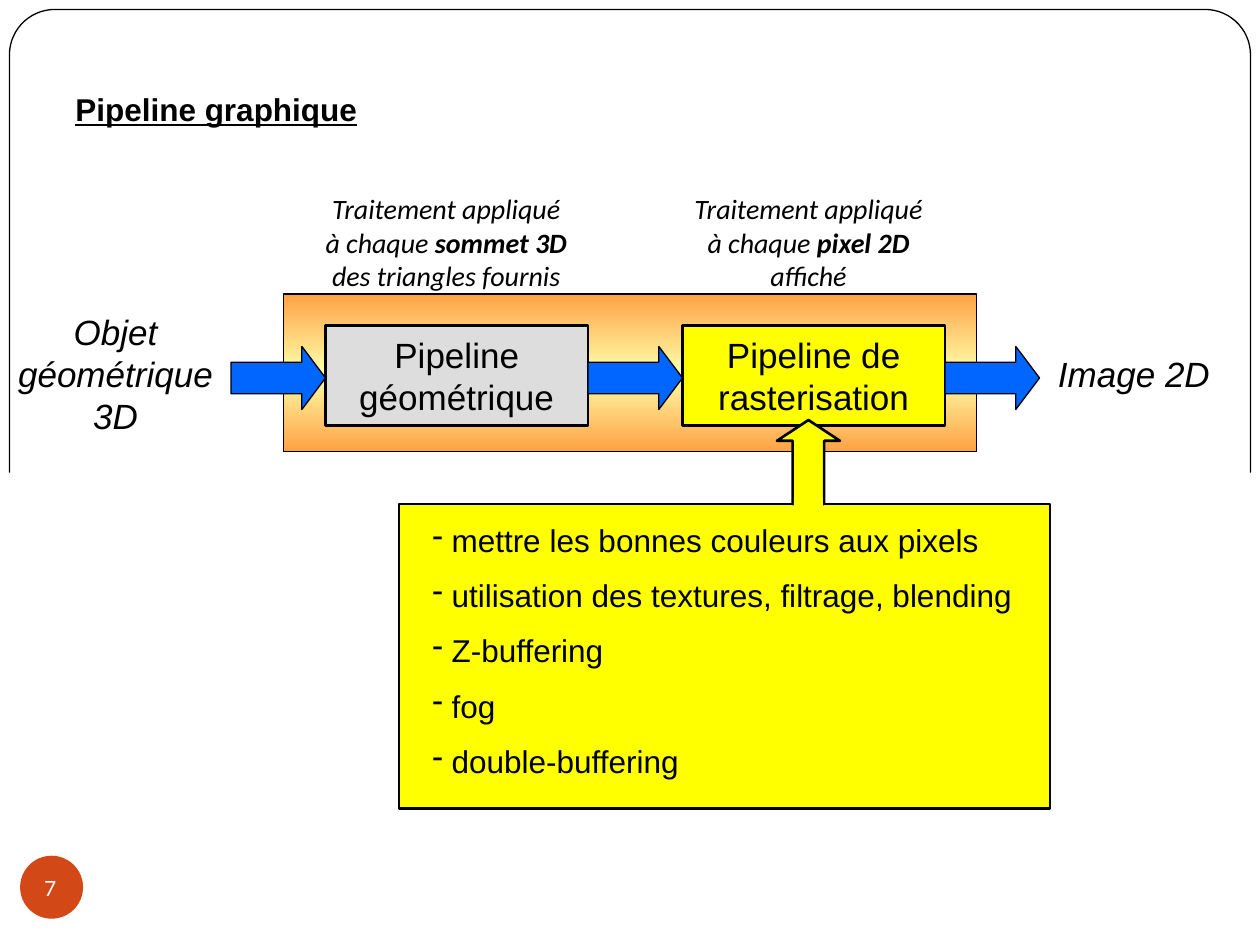
from copy import deepcopy
from math import cos, radians, sin

from lxml import etree
from pptx import Presentation
from pptx.dml.color import RGBColor
from pptx.enum.shapes import MSO_SHAPE
from pptx.enum.text import MSO_ANCHOR, PP_ALIGN
from pptx.oxml.ns import qn
from pptx.util import Pt

RECT, OVAL = MSO_SHAPE.RECTANGLE, MSO_SHAPE.OVAL
RIGHT_ARROW, UP_ARROW = MSO_SHAPE.RIGHT_ARROW, MSO_SHAPE.UP_ARROW
LEFT, CENTER = PP_ALIGN.LEFT, PP_ALIGN.CENTER
TOP, MIDDLE = MSO_ANCHOR.TOP, MSO_ANCHOR.MIDDLE

COLORS = {
    "black": "000000", "white": "FFFFFF", "yellow": "FFFF00", "grey": "DDDDDD",
    "blue": "0066FF", "orange": "FFA245", "cream": "FFFFAB", "badge": "D34817",
}

# Content
TITLE = "Pipeline graphique"
SOURCE = ("Objet géométrique 3D", (0, 174, 132, 79))
RESULT = ("Image 2D", (588, 198, 120, 31))
STAGES = [("Pipeline géométrique", "grey"), ("Pipeline de rasterisation", "yellow")]
NOTES = [
    (["Traitement appliqué à chaque ", "sommet 3D", " des triangles fournis"],
     (178.5, 106, 153, 65)),
    (["Traitement appliqué à chaque ", "pixel 2D", " affiché"],
     (388, 106, 148, 65)),
]
RASTER_TASKS = [
    "mettre les bonnes couleurs aux pixels",
    "utilisation des textures, filtrage, blending",
    "Z-buffering",
    "fog",
    "double-buffering",
]
PAGE = "7"

# Layout of the chain: arrow, stage, arrow, stage, arrow
CHAIN_LEFT, ARROW_W, STAGE_W = 132, 54, 150
STRIDE = ARROW_W + STAGE_W
HANGING = 11

prs = Presentation()
prs.slide_width, prs.slide_height = Pt(720), Pt(540)
slide = prs.slides.add_slide(prs.slide_layouts[6])


def rgb(name):
    return RGBColor.from_string(COLORS[name])


def add_block(kind, box, fill=None, line_width=None, adjust=()):
    block = slide.shapes.add_shape(kind, *map(Pt, box))
    block.shadow.inherit = False
    for index, value in enumerate(adjust):
        block.adjustments[index] = value
    if fill:
        block.fill.solid()
        block.fill.fore_color.rgb = rgb(fill)
    if line_width:
        block.line.color.rgb = rgb("black")
        block.line.width = Pt(line_width)
    else:
        block.line.fill.background()
    return block


def write(holder, paragraphs, size, align=CENTER, anchor=TOP, font="Arial",
          color="black", italic=False):
    """Each paragraph is a list of runs."""
    frame = holder.text_frame
    frame.word_wrap = True
    frame.vertical_anchor = anchor
    for index, runs in enumerate(paragraphs):
        paragraph = frame.add_paragraph() if index else frame.paragraphs[0]
        paragraph.alignment = align
        for words in runs:
            run = paragraph.add_run()
            run.text = words
            run.font.name, run.font.size = font, Pt(size)
            run.font.color.rgb = rgb(color)
            run.font.italic = italic
    return frame


def add_label(box, paragraphs, size, **style):
    return write(slide.shapes.add_textbox(*map(Pt, box)), paragraphs, size, **style)


# Page frame, open at the bottom
EDGE, RADIUS, FRAME_BOTTOM = 5.4, 26, 270


def corner(center_x, start):
    return [(center_x + RADIUS * cos(radians(a)), EDGE + RADIUS + RADIUS * sin(radians(a)))
            for a in range(start, start + 91, 6)]


outline = [(EDGE, FRAME_BOTTOM), *corner(EDGE + RADIUS, 180),
           *corner(720 - EDGE - RADIUS, 270), (720 - EDGE, FRAME_BOTTOM)]
points = [(Pt(x), Pt(y)) for x, y in outline]
builder = slide.shapes.build_freeform(*points[0])
builder.add_line_segments(points[1:], close=False)
page_frame = builder.convert_to_shape()
page_frame.shadow.inherit = False
page_frame.fill.background()
page_frame.line.color.rgb = rgb("black")
page_frame.line.width = Pt(0.75)

# Gradient band behind the stages
band = add_block(RECT, (162, 168, 396, 90), line_width=0.75)
band.fill.gradient()
band.fill.gradient_angle = 90
stop_list = band._element.spPr.find(qn("a:gradFill")).find(qn("a:gsLst"))
stop_list.insert(1, deepcopy(stop_list[0]))
for stop, position, name in zip(band.fill.gradient_stops, (0, 0.5, 1),
                                ("orange", "cream", "orange")):
    stop.position = position
    stop.color.rgb = rgb(name)

# Chain from the 3D object to the 2D image
add_block(RECT, (228, 288, 372, 174), "yellow", 1.5)
for index, (name, fill) in enumerate(STAGES):
    stage_box = (CHAIN_LEFT + ARROW_W + index * STRIDE, 186, STAGE_W, 57)
    write(add_block(RECT, stage_box, fill, 1.5), [[name]], 20, anchor=MIDDLE)
for words, box in (SOURCE, RESULT):
    add_label(box, [[words]], 20, italic=True)
for index in range(len(STAGES) + 1):
    add_block(RIGHT_ARROW, (CHAIN_LEFT + index * STRIDE, 198, ARROW_W, 36),
              "blue", 0.75, (0.5, 0.375))

# Title
title = add_label((36, 48, 342, 36), [[TITLE]], 18, align=LEFT)
title_font = title.paragraphs[0].runs[0].font
title_font.bold = title_font.underline = True

# Rasterisation tasks
tasks = add_label((240, 294, 354, 159), [[task] for task in RASTER_TASKS], 18, align=LEFT)
for index, paragraph in enumerate(tasks.paragraphs):
    if index:
        paragraph.space_before = Pt(10)
    props = paragraph._p.get_or_add_pPr()
    props.set("marL", str(Pt(HANGING)))
    props.set("indent", str(-Pt(HANGING)))
    etree.SubElement(props, qn("a:buChar")).set("char", "-")

# Arrow up to the rasterisation stage, with its base merged into the task box
add_block(UP_ARROW, (444, 240, 36, 48), "yellow", 1.5, (0.5, 0.33))
add_block(RECT, (453.75, 284.5, 16.5, 7), "yellow")

# Notes above the stages, with the processed element in bold
for runs, box in NOTES:
    note = add_label(box, [runs], 16, font="Calibri", italic=True)
    note.paragraphs[0].runs[1].font.bold = True

# Page number
add_block(OVAL, (11.5, 489, 36, 36), "badge")
number = add_label((25.2, 499.7, 14.5, 15), [[PAGE]], 12, align=LEFT,
                   font="Lato", color="white")
number.margin_left = number.margin_right = number.margin_top = number.margin_bottom = 0
number.paragraphs[0].line_spacing = Pt(15.2)

prs.save("out.pptx")
